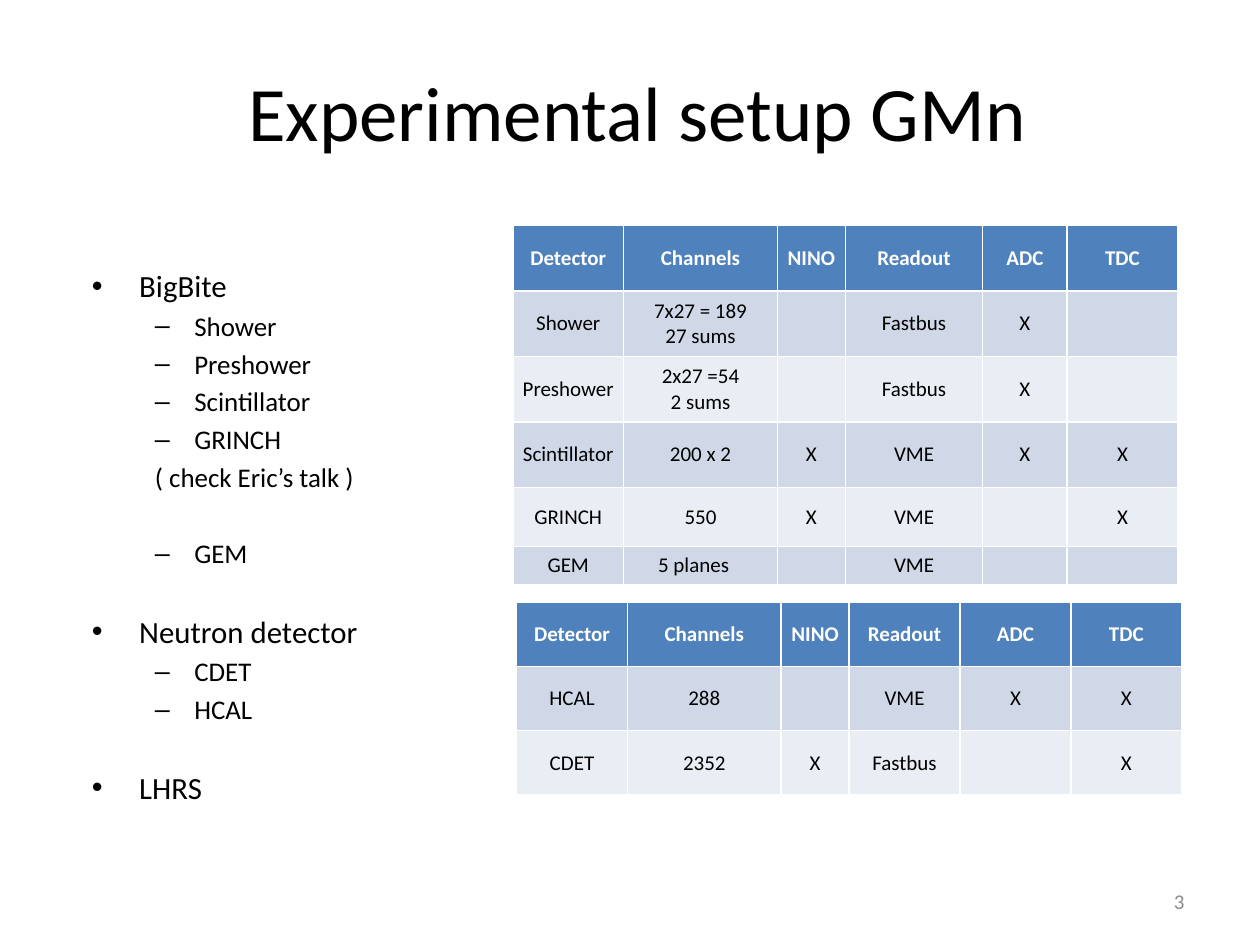
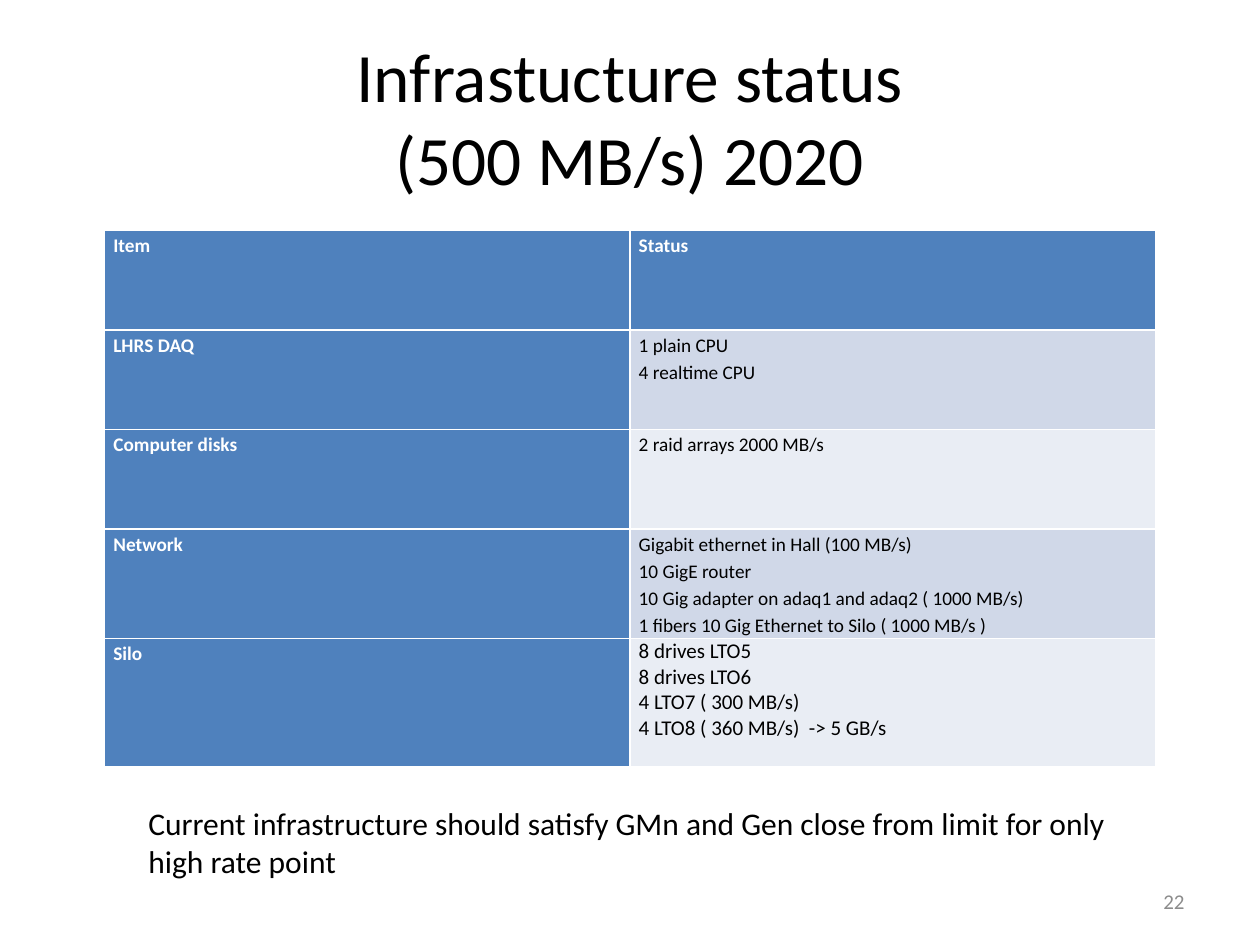
from lxml.etree import SubElement
from pptx import Presentation
from pptx.dml.color import RGBColor as Color
from pptx.enum.text import MSO_ANCHOR as Anchor, MSO_AUTO_SIZE as AutoSize, PP_ALIGN as Align
from pptx.oxml.ns import qn
from pptx.util import Inches, Pt

FONT = "Calibri"
COLORS = {
    "text": "000000",
    "header": "4F81BD",
    "header_text": "FFFFFF",
    "odd_band": "D0D8E8",
    "even_band": "E9EDF4",
    "number": "8C8C8C",
}

presentation = Presentation()
presentation.slide_width = Inches(10)
presentation.slide_height = Inches(7.5)
COLUMN = presentation.slide_width // 100
ROW = presentation.slide_height // 75


def grid(left, top, width, height):
    return int(left * COLUMN), int(top * ROW), int(width * COLUMN), int(height * ROW)


def style(paragraph, size, color="text", bold=False, align=None):
    paragraph.font.name = FONT
    paragraph.font.size = Pt(size)
    paragraph.font.bold = bold
    paragraph.font.color.rgb = Color.from_string(COLORS[color])
    if align is not None:
        paragraph.alignment = align


pages = [
    (1, "Experimental setup GMn", 44, (7.5, 3.3, 86.2, 10.9), "3"),
    (5, "Infrastucture status\v(500 MB/s) 2020", 39.6, (5, 3, 90, 12.5), "22"),
]
for layout, title_text, title_size, title_area, number in pages:
    slide = presentation.slides.add_slide(presentation.slide_layouts[layout])
    title = slide.shapes.title
    title.left, title.top, title.width, title.height = grid(*title_area)
    title.text_frame.text = title_text
    title.text_frame.auto_size = AutoSize.NONE
    title.text_frame.vertical_anchor = Anchor.MIDDLE
    style(title.text_frame.paragraphs[0], title_size, align=Align.CENTER)

    number_box = slide.shapes.add_textbox(*grid(71.7, 69.5, 23.3, 4))
    number_box.text_frame.word_wrap = True
    number_box.text_frame.vertical_anchor = Anchor.MIDDLE
    number_box.text_frame.text = number
    style(number_box.text_frame.paragraphs[0], 12, "number", align=Align.RIGHT)

setup_slide, status_slide = presentation.slides

outline = [
    (0, "BigBite", False),
    (1, "Shower", False),
    (1, "Preshower", False),
    (1, "Scintillator", False),
    (1, "GRINCH", False),
    (1, "( check Eric’s talk )", False),
    (1, "GEM", True),
    (0, "Neutron detector", True),
    (1, "CDET", False),
    (1, "HCAL", False),
    (0, "LHRS", True),
]
body = setup_slide.placeholders[1]
body.left, body.top, body.width, body.height = grid(6.3, 20.7, 86.2, 43)
body.text_frame.auto_size = AutoSize.NONE
body.text_frame.text = "\n".join(text for level, text, gap in outline)
for paragraph, (level, text, gap) in zip(body.text_frame.paragraphs, outline):
    paragraph.level = level
    if gap:
        paragraph.space_before = Pt(25)
    if text.startswith("("):
        properties = paragraph._p.get_or_add_pPr()
        properties.set("marL", str(Inches(0.5)))
        properties.set("indent", "0")
        SubElement(properties, qn("a:buNone"))
    style(paragraph, 15.4 if level else 17.6)

heading = ["Detector", "Channels", "NINO", "Readout", "ADC", "TDC"]
electron_rows = [
    heading,
    ["Shower", "7x27 = 189\n27 sums", "", "Fastbus", "X", ""],
    ["Preshower", "2x27 =54\n2 sums", "", "Fastbus", "X", ""],
    ["Scintillator", "200 x 2", "X", "VME", "X", "X"],
    ["GRINCH", "550", "X", "VME", "", "X"],
    ["GEM", "5 planes", "", "VME", "", ""],
]
neutron_rows = [
    heading,
    ["HCAL", "288", "", "VME", "X", "X"],
    ["CDET", "2352", "X", "Fastbus", "", "X"],
]
status_rows = [
    ["Item", "Status"],
    ["LHRS DAQ", "1 plain CPU\n4 realtime CPU"],
    ["Computer disks", "2 raid arrays 2000 MB/s"],
    ["Network", "Gigabit ethernet in Hall (100 MB/s)\n10 GigE router\n"
     "10 Gig adapter on adaq1 and adaq2 ( 1000 MB/s)\n"
     "1 fibers 10 Gig Ethernet to Silo ( 1000 MB/s )"],
    ["Silo", "8 drives LTO5\n8 drives LTO6\n4 LTO7 ( 300 MB/s)\n4 LTO8 ( 360 MB/s)  -> 5 GB/s"],
]
tables = [
    (setup_slide, 40.7, 17.9, [8.8, 12.2, 5.4, 10.9, 6.7, 8.8],
     [5.2, 5.2, 5.2, 5.2, 4.7, 3], electron_rows),
    (setup_slide, 41, 47.8, [8.8, 12.2, 5.4, 8.8, 8.8, 8.8], [5.1] * 3, neutron_rows),
    (status_slide, 8.3, 18.3, [41.7] * 2, [7.9, 7.9, 7.9, 8.7, 10.2], status_rows),
]
for slide, left, top, widths, heights, rows in tables:
    area = grid(left, top, sum(widths), sum(heights))
    table = slide.shapes.add_table(len(rows), len(widths), *area).table
    is_status = slide is status_slide
    table.first_col = is_status
    for column, width in zip(table.columns, widths):
        column.width = int(width * COLUMN)
    for row_index, (row, height, texts) in enumerate(zip(table.rows, heights, rows)):
        row.height = int(height * ROW)
        for column_index, (cell, text) in enumerate(zip(row.cells, texts)):
            is_header = row_index == 0 or (is_status and column_index == 0)
            band = "header" if is_header else "odd_band" if row_index % 2 else "even_band"
            cell.fill.solid()
            cell.fill.fore_color.rgb = Color.from_string(COLORS[band])
            cell.margin_left = cell.margin_right = Inches(0.07)
            cell.margin_top = cell.margin_bottom = Inches(0 if is_status else 0.04)
            if text == "5 planes":
                cell.margin_right = Inches(0.18)
            cell.vertical_anchor = Anchor.TOP if is_status else Anchor.MIDDLE
            cell.text_frame.text = text
            is_drive_list = text.startswith("8 drives")
            for paragraph in cell.text_frame.paragraphs:
                style(paragraph, 11 if is_status and not is_drive_list else 12,
                      "header_text" if is_header else "text", is_header,
                      Align.LEFT if is_status else Align.CENTER)
                if is_status and not is_drive_list:
                    paragraph.line_spacing = 1.15

conclusion = status_slide.shapes.add_textbox(*grid(10.8, 63.3, 79.4, 7.1))
conclusion.text_frame.word_wrap = False
conclusion.text_frame.text = (
    "Current infrastructure should satisfy GMn and Gen close from limit for only\n"
    "high rate point"
)
for paragraph in conclusion.text_frame.paragraphs:
    style(paragraph, 18)

presentation.save("out.pptx")
